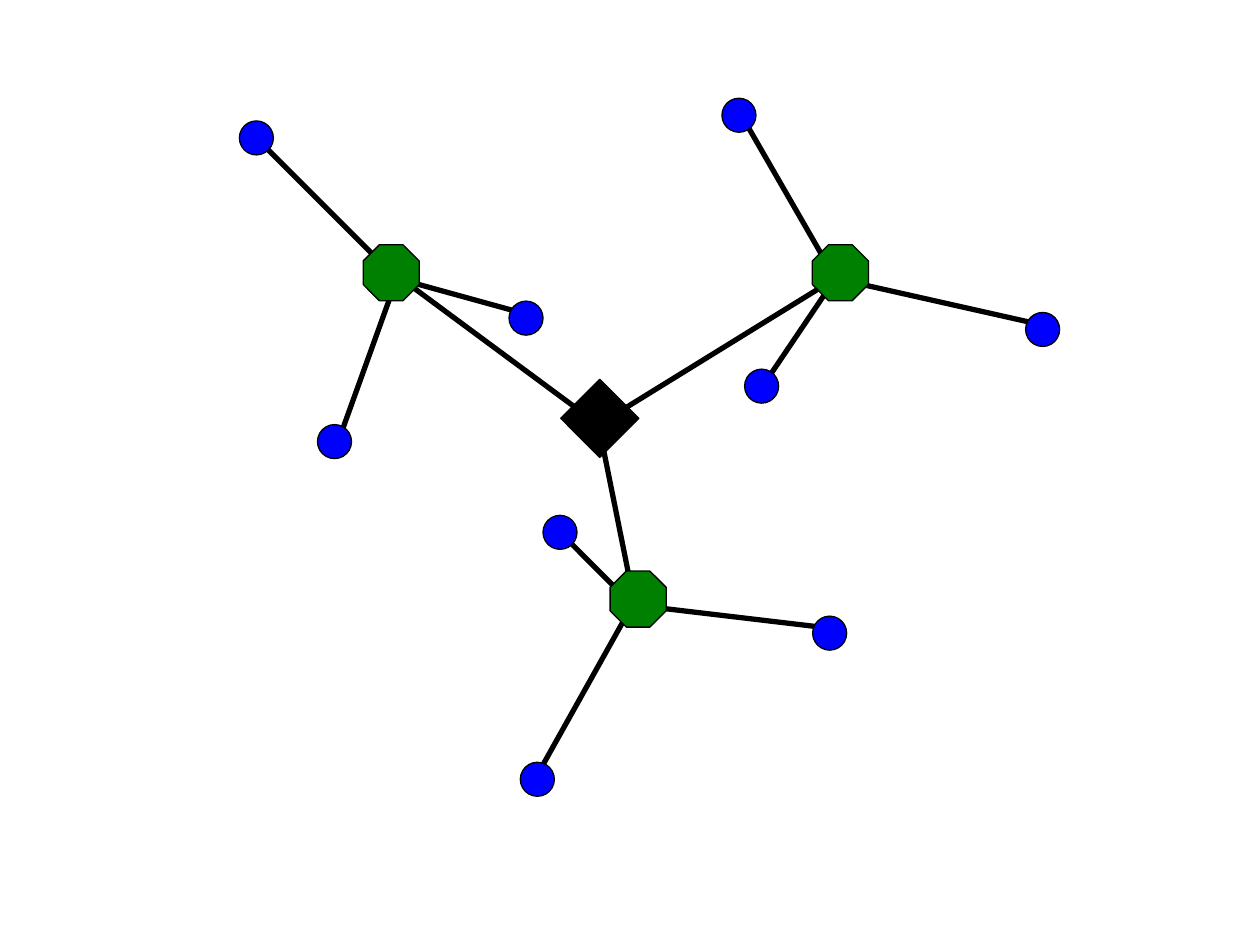
from pptx import Presentation
from pptx.dml.color import RGBColor
from pptx.enum.shapes import MSO_CONNECTOR as Wire, MSO_SHAPE as Form
from pptx.oxml.ns import qn
from pptx.util import Inches, Pt
from lxml.etree import SubElement

COLS, ROWS = 100, 75
BLACK, GREEN, BLUE = "000000", "008000", "0000FF"


def tint(code):
    return RGBColor.from_string(code)


class Board:
    """Holds the style and the current slide; lengths are grid cells."""

    def __init__(self, deck):
        self.slide = deck.slides.add_slide(deck.slide_layouts[6])
        self.col = deck.slide_width / COLS
        self.row = deck.slide_height / ROWS
        self.edge, self.thick = Pt(0.75), Pt(3)
        self.net = self.slide.shapes.add_group_shape()

    def spot(self, x, y):
        return round(x * self.col), round(y * self.row)

    def wire(self, start, end):
        line = self.net.shapes.add_connector(
            Wire.STRAIGHT, *self.spot(*start), *self.spot(*end))
        line.line.color.rgb = tint(BLACK)
        line.line.width = self.thick
        SubElement(line._element.spPr, qn("a:effectLst"))

    def node(self, form, mid, size, fill):
        x, y = mid
        shape = self.slide.shapes.add_shape(
            form, *self.spot(x - size / 2, y - size / 2),
            *self.spot(size, size))
        shape.shadow.inherit = False
        shape.fill.solid()
        shape.fill.fore_color.rgb = tint(fill)
        shape.line.color.rgb = tint(BLACK)
        shape.line.width = self.edge
        return shape


# Each branch: hub centre, trunk end, joint, leaves as (centre, wire tip)
CORE, ROOT = (47.6, 33.2), (47.5, 33.7)
TREE = [
    ((31.05, 21.65), (30.6, 21.2), (31.5, 22.1), [
        ((41.75, 25.25), (41.3, 24.8)),
        ((20.35, 10.95), (20.8, 11.4)),
        ((26.55, 35.05), (27, 34.6))]),
    ((66.7, 21.65), (66.3, 22.1), (66.3, 22.1), [
        ((58.65, 9.15), (59.1, 9.6)),
        ((82.75, 26.15), (82.3, 25.7)),
        ((60.45, 30.65), (60.9, 30.1))]),
    ((50.65, 47.55), (50.2, 47.1), (50.2, 48), [
        ((65.85, 50.25), (65.4, 49.8)),
        ((42.65, 61.85), (42.2, 62.3)),
        ((44.45, 42.25), (44.8, 42.6))]),
]


def main():
    deck = Presentation()
    deck.slide_width, deck.slide_height = Inches(10), Inches(7.5)
    board = Board(deck)

    # Wires, trunks first
    for _, end, _, _ in TREE:
        board.wire(ROOT, end)
    for _, _, joint, leaves in TREE:
        for _, tip in leaves:
            board.wire(joint, tip)

    # Leaves, then hubs, then the core on top
    for _, _, _, leaves in TREE:
        for mid, _ in leaves:
            board.node(Form.FLOWCHART_CONNECTOR, mid, 2.7, BLUE)
    for hub, _, _, _ in TREE:
        board.node(Form.OCTAGON, hub, 4.45, GREEN).adjustments[0] = 0.29
    board.node(Form.DIAMOND, CORE, 6.2, BLACK)

    deck.save("out.pptx")


if __name__ == "__main__":
    main()
